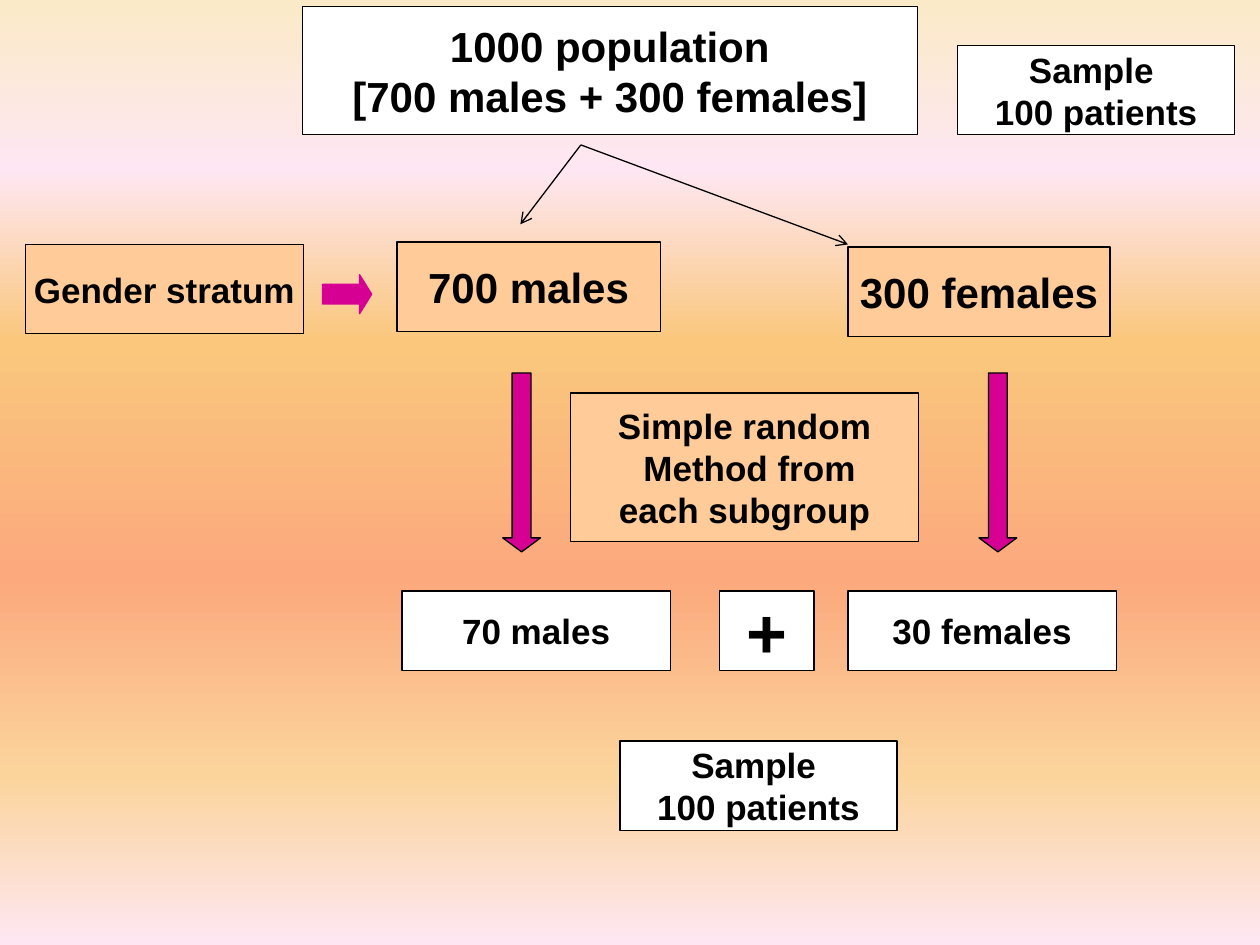
from lxml import etree
from pptx import Presentation
from pptx.dml.color import RGBColor
from pptx.enum.shapes import MSO_CONNECTOR as CONNECTOR, MSO_SHAPE as SHAPE
from pptx.enum.text import MSO_ANCHOR as ANCHOR, PP_ALIGN as ALIGN
from pptx.oxml.ns import qn
from pptx.util import Inches, Pt

BLACK, WHITE, PEACH, MAGENTA = "000000", "FFFFFF", "FFCC99", "D60093"
COLUMNS, ROWS = 100, 75

presentation = Presentation()
presentation.slide_width, presentation.slide_height = Inches(10), Inches(7.5)
cell = presentation.slide_width / COLUMNS  # square grid cells, 100 by 75
slide = presentation.slides.add_slide(presentation.slide_layouts[6])


def grid(*cells):
    return [round(count * cell) for count in cells]


def add_block(text="", *, at, kind=SHAPE.RECTANGLE, fill=WHITE, line=BLACK, size=20, rtl=False):
    shape = slide.shapes.add_shape(kind, *grid(*at))
    shape.shadow.inherit = False
    shape.fill.solid()
    shape.fill.fore_color.rgb = RGBColor.from_string(fill)
    shape.line.color.rgb = RGBColor.from_string(line)
    shape.line.width = Pt(0.75)
    if text:
        frame = shape.text_frame
        frame.text = text
        frame.word_wrap = False
        frame.vertical_anchor = ANCHOR.MIDDLE
        for paragraph in frame.paragraphs:
            paragraph.alignment = ALIGN.CENTER
            if rtl:
                paragraph._p.get_or_add_pPr().set("rtl", "1")
            font = paragraph.runs[0].font
            font.name, font.size, font.bold = "Arial", Pt(size), True
            font.color.rgb = RGBColor.from_string(BLACK)
    return shape


# Background: vertical gradient
background = slide.background.fill
background.gradient()
background.gradient_angle = 270
stops = next(slide.element.iter(qn("a:gsLst")))
for stop in list(stops):
    stops.remove(stop)
for percent, color in [(0, "FBEAC7"), (18, "FEE7F2"), (36, "FAC77D"),
                       (61, "FBA97D"), (82, "FBD49C"), (100, "FEE7F2")]:
    stop = etree.SubElement(stops, qn("a:gs"), pos=str(percent * 1000))
    etree.SubElement(stop, qn("a:srgbClr"), val=color)

# Population and the sample wanted, repeated as the result at the bottom
add_block("1000 population\n[700 males + 300 females]", at=(24, 0.5, 48.8, 10.2), size=24)
for left, top in [(76, 3.6), (49.2, 58.8)]:
    add_block("Sample \n100 patients", at=(left, top, 22, 7.1))

# Strata
add_block("Gender stratum", at=(2, 19.4, 22.1, 7.1), fill=PEACH, rtl=True)
add_block("700 males", at=(31.5, 19.2, 20.9, 7.1), fill=PEACH, size=24)
add_block("300 females", at=(67.3, 19.6, 20.8, 7.1), fill=PEACH, size=24)

# Sampling method
add_block("Simple random\nMethod from \neach subgroup", at=(45.3, 31.2, 27.6, 11.8),
          fill=PEACH, rtl=True)

# Share drawn from each stratum
for text, left, width, size in [("70 males", 31.9, 21.3, 20), ("+", 57.1, 7.5, 40),
                                ("30 females", 67.3, 21.3, 20)]:
    add_block(text, at=(left, 46.9, width, 6.3), size=size)

# Block arrows
arrow = add_block(at=(25.6, 21.8, 3.9, 3.1), kind=SHAPE.RIGHT_ARROW, fill=MAGENTA, line=MAGENTA)
arrow.adjustments[1] = 0.31
for left in (39.9, 77.7):
    arrow = add_block(at=(left, 29.6, 3, 14.2), kind=SHAPE.DOWN_ARROW, fill=MAGENTA)
    arrow.adjustments[1] = 0.37

# Thin arrows from the population to its strata
for end in [(41.3, 17.8), (67.3, 19.4)]:
    connector = slide.shapes.add_connector(CONNECTOR.STRAIGHT, *grid(46.1, 11.5, *end))
    connector.line.color.rgb = RGBColor.from_string(BLACK)
    connector.line.width = Pt(0.75)
    etree.SubElement(connector.line._get_or_add_ln(), qn("a:tailEnd"), type="arrow")
    etree.SubElement(connector._element.spPr, qn("a:effectLst"))

presentation.save("out.pptx")
